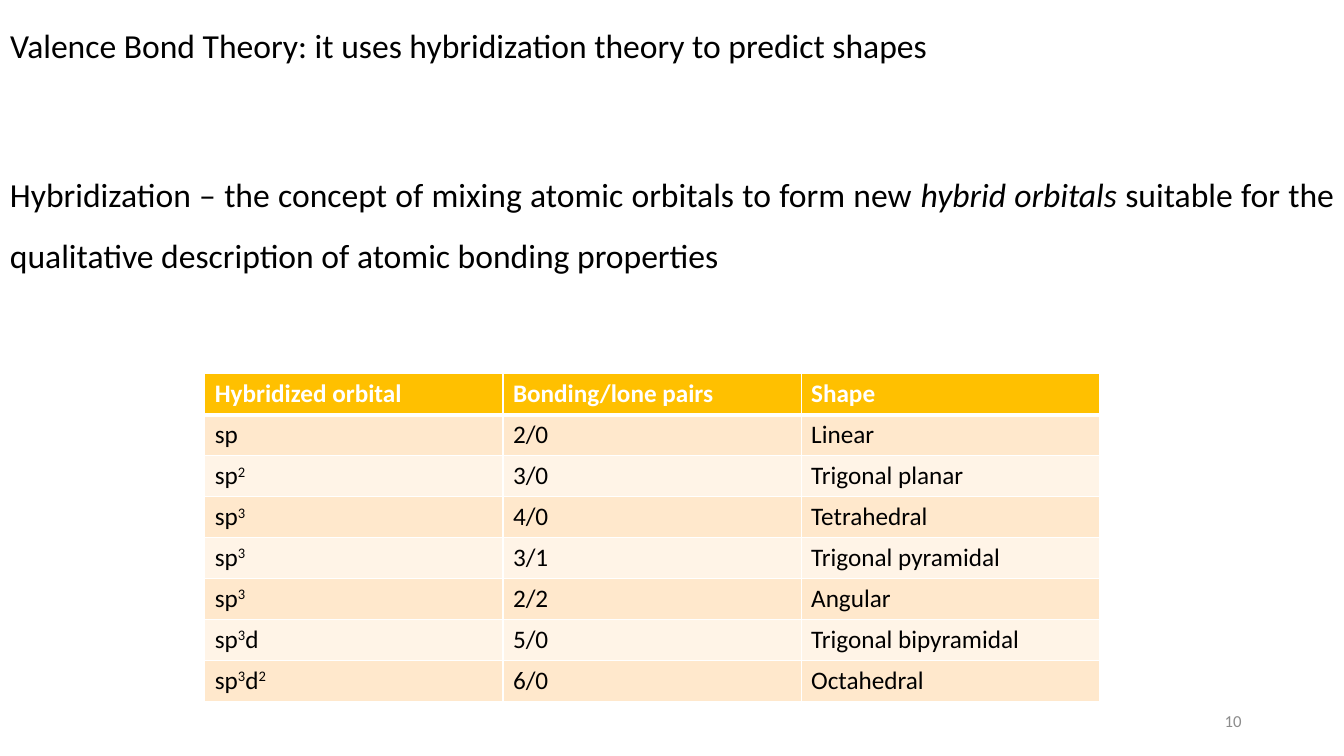
from dataclasses import dataclass
from itertools import groupby

from lxml.etree import SubElement
from pptx import Presentation
from pptx.dml.color import RGBColor
from pptx.enum.text import MSO_ANCHOR, MSO_AUTO_SIZE, PP_ALIGN
from pptx.oxml.ns import qn
from pptx.util import Emu, Pt


@dataclass(frozen=True)
class Theme:
    font: str = "Calibri"
    ink: str = "000000"
    white: str = "FFFFFF"
    muted: str = "8C8C8C"
    header: str = "FFC000"
    bands: tuple[str, str] = ("FFE8CC", "FFF4E7")
    body_size: int = 24
    table_size: int = 18
    number_size: int = 12


@dataclass(frozen=True)
class Box:
    left: int
    top: int
    width: int
    height: int

    def emu(self) -> tuple[Emu, ...]:
        return tuple(px(n) for n in (self.left, self.top, self.width, self.height))


@dataclass(frozen=True)
class Hybrid:
    orbital: str
    pairs: str
    shape: str


THEME = Theme()
SLIDE_W, SLIDE_H = 1280, 720
TITLE_BOX = Box(0, 0, SLIDE_W, 72)
DEFINITION_BOX = Box(0, 142, SLIDE_W, 132)
NUMBER_BOX = Box(904, 667, 288, 38)
COLUMN_W, ROW_H = 284, 39
HEADINGS = ("Hybridized orbital", "Bonding/lone pairs", "Shape")
HYBRIDS = (
    Hybrid("sp", "2/0", "Linear"),
    Hybrid("sp2", "3/0", "Trigonal planar"),
    Hybrid("sp3", "4/0", "Tetrahedral"),
    Hybrid("sp3", "3/1", "Trigonal pyramidal"),
    Hybrid("sp3", "2/2", "Angular"),
    Hybrid("sp3d", "5/0", "Trigonal bipyramidal"),
    Hybrid("sp3d2", "6/0", "Octahedral"),
)
TABLE_BOX = Box(195, 356, 3 * COLUMN_W, (len(HYBRIDS) + 1) * ROW_H)


def px(n: int) -> Emu:
    return Emu(n * 9525)


def style(p, size: int, color: str, bold: bool = False) -> None:
    p.font.name = THEME.font
    p.font.size = Pt(size)
    p.font.bold = bold
    p.font.color.rgb = RGBColor.from_string(color)


def set_body(sp, parts: tuple[str, ...]) -> None:
    """Write justified body text; every second part is italic."""
    tf = sp.text_frame
    tf.word_wrap = True
    tf.auto_size = MSO_AUTO_SIZE.NONE
    tf.vertical_anchor = MSO_ANCHOR.TOP
    p = tf.paragraphs[0]
    p.alignment = PP_ALIGN.JUSTIFY
    p.line_spacing = 1.5
    style(p, THEME.body_size, THEME.ink)
    for i, part in enumerate(parts):
        r = p.add_run()
        r.text = part
        if i % 2:
            r.font.italic = True


def add_formula(p, formula: str) -> None:
    """Write an orbital name with its digits raised."""
    for raised, letters in groupby(formula, str.isdigit):
        r = p.add_run()
        r.text = "".join(letters)
        if raised:
            r._r.get_or_add_rPr().set("baseline", "30000")


def set_borders(cell, bottom: int) -> None:
    tc_pr = cell._tc.get_or_add_tcPr()
    for side, width in (("L", 1), ("R", 1), ("T", 1), ("B", bottom)):
        ln = SubElement(tc_pr, qn(f"a:ln{side}"), w=str(Pt(width)))
        fill = SubElement(ln, qn("a:solidFill"))
        SubElement(fill, qn("a:srgbClr"), val=THEME.white)


def add_hybrid_table(s) -> None:
    rows = [HEADINGS] + [(h.orbital, h.pairs, h.shape) for h in HYBRIDS]
    table = s.shapes.add_table(len(rows), len(HEADINGS), *TABLE_BOX.emu()).table
    for column in table.columns:
        column.width = px(COLUMN_W)
    for i, row in enumerate(rows):
        is_header = i == 0
        table.rows[i].height = px(ROW_H)
        for j, text in enumerate(row):
            cell = table.cell(i, j)
            set_borders(cell, 3 if is_header else 1)
            cell.fill.solid()
            band = THEME.header if is_header else THEME.bands[(i - 1) % 2]
            cell.fill.fore_color.rgb = RGBColor.from_string(band)
            p = cell.text_frame.paragraphs[0]
            style(p, THEME.table_size, THEME.white if is_header else THEME.ink, is_header)
            if j == 0:
                add_formula(p, text)
            else:
                p.add_run().text = text


def add_slide_number(s, number: str) -> None:
    tf = s.shapes.add_textbox(*NUMBER_BOX.emu()).text_frame
    tf.word_wrap = True
    tf.vertical_anchor = MSO_ANCHOR.MIDDLE
    p = tf.paragraphs[0]
    p.alignment = PP_ALIGN.RIGHT
    style(p, THEME.number_size, THEME.muted)
    p.add_run().text = number


def main() -> None:
    prs = Presentation()
    prs.slide_width, prs.slide_height = px(SLIDE_W), px(SLIDE_H)
    s = prs.slides.add_slide(prs.slide_layouts[5])
    title = s.shapes.title
    title.left, title.top, title.width, title.height = TITLE_BOX.emu()
    set_body(title, ("Valence Bond Theory: it uses hybridization theory to predict shapes",))
    set_body(s.shapes.add_textbox(*DEFINITION_BOX.emu()), (
        "Hybridization – the concept of mixing atomic orbitals to form new ",
        "hybrid orbitals",
        " suitable for the qualitative description of atomic bonding properties",
    ))
    add_slide_number(s, "10")
    add_hybrid_table(s)
    prs.save("out.pptx")


if __name__ == "__main__":
    main()
